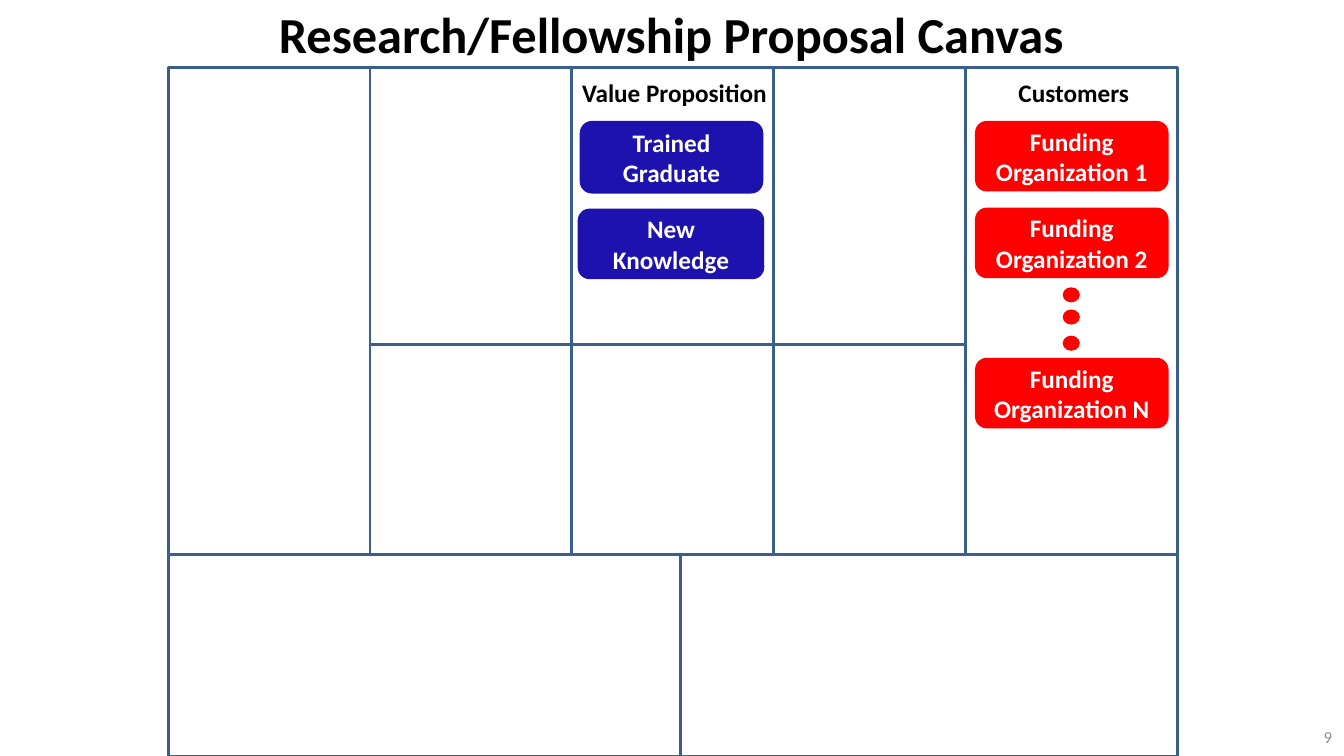
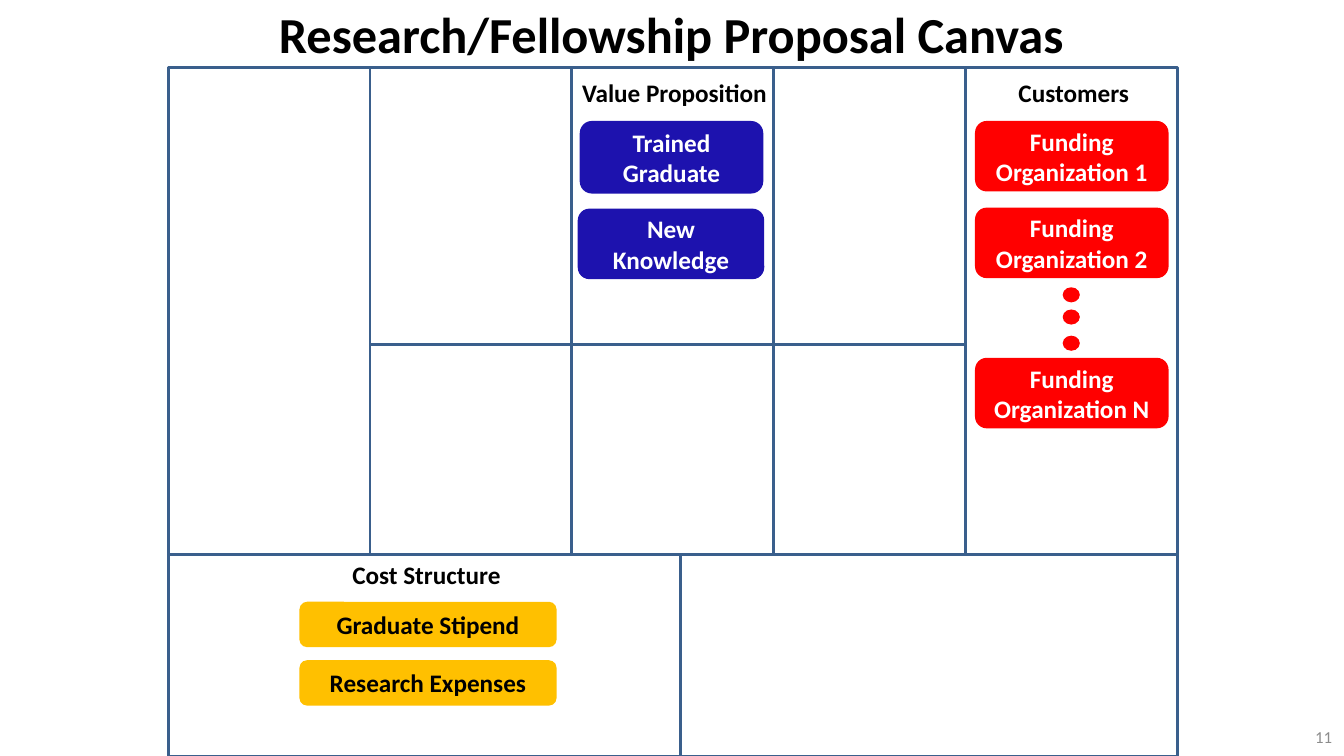
from dataclasses import dataclass

import pptx
import pptx.dml.color
import pptx.enum.shapes
import pptx.enum.text
import pptx.util

Inches = pptx.util.Inches
Shapes = pptx.enum.shapes.MSO_SHAPE
Align = pptx.enum.text.PP_ALIGN
Anchor = pptx.enum.text.MSO_ANCHOR


@dataclass(frozen=True)
class Theme:
    font: str = "Calibri"
    title_size: int = 36
    body_size: int = 18
    number_size: int = 12
    line_width: int = 2
    ink: str = "000000"
    paper: str = "FFFFFF"
    grid: str = "3A5F8C"
    number: str = "8C8C8C"
    value: str = "1D12AE"
    customer: str = "FF0000"
    cost: str = "FFC000"


@dataclass(frozen=True)
class Box:
    left: float
    top: float
    width: float
    height: float

    def inside(self, left, top, width, height):
        """Return a box whose corner is measured from this one's."""
        return Box(self.left + left, self.top + top, width, height)

    def lengths(self):
        return [Inches(round(side, 2))
                for side in (self.left, self.top, self.width, self.height)]


THEME = Theme()
SLIDE = Box(0, 0, 13.33, 7.5)

# Vertical and horizontal rules of the canvas
COLUMNS = (1.67, 3.67, 5.67, 7.67, 9.58, 11.68)
TOP, MIDDLE, LOWER, BOTTOM = 0.67, 3.42, 5.5, 7.5
SPLIT = 6.75


def cell(left, top, right, bottom):
    return Box(left, top, right - left, bottom - top)


UPPER_CELLS = [cell(left, TOP, right, MIDDLE)
               for left, right in zip(COLUMNS[1:4], COLUMNS[2:5])]
VALUE_CELL = UPPER_CELLS[1]
CUSTOMER_CELL = cell(COLUMNS[4], TOP, COLUMNS[5], LOWER)
COST_CELL = cell(COLUMNS[0], LOWER, SPLIT, BOTTOM)
CELLS = [
    COST_CELL,
    cell(COLUMNS[0], TOP, COLUMNS[1], LOWER),
    cell(SPLIT, LOWER, COLUMNS[5], BOTTOM),
    *UPPER_CELLS,
    CUSTOMER_CELL,
    cell(COLUMNS[2], MIDDLE, COLUMNS[3], LOWER),
]


def rgb(value):
    return pptx.dml.color.RGBColor.from_string(value)


def write(frame, text, size, color, bold=True, align=Align.CENTER,
          anchor=Anchor.MIDDLE):
    frame.vertical_anchor = anchor
    para = frame.paragraphs[0]
    para.alignment = align
    span = para.add_run()
    span.text = text
    span.font.name = THEME.font
    span.font.size = pptx.util.Pt(size)
    span.font.bold = bold
    span.font.color.rgb = rgb(color)


def add_text(page, box, text, size, color, wrap=True, **style):
    frame = page.shapes.add_textbox(*box.lengths()).text_frame
    frame.word_wrap = wrap
    write(frame, text, size, color, **style)


def add_filled(page, kind, box, fill):
    shape = page.shapes.add_shape(kind, *box.lengths())
    shape.shadow.inherit = False
    shape.fill.solid()
    shape.fill.fore_color.rgb = rgb(fill)
    shape.line.fill.background()
    return shape


def add_card(page, box, text, fill, color=THEME.paper):
    card = add_filled(page, Shapes.ROUNDED_RECTANGLE, box, fill)
    write(card.text_frame, text, THEME.body_size, color)


def add_heading(page, region, text, drop=0.05):
    """Centre a one-line heading, in a box a little wider than its region."""
    add_text(page, region.inside(-0.08, drop, region.width + 0.2, 0.4), text,
             THEME.body_size, THEME.ink, wrap=False, anchor=Anchor.TOP)


def add_grid(page, cells):
    for box in cells:
        shape = page.shapes.add_shape(Shapes.RECTANGLE, *box.lengths())
        shape.shadow.inherit = False
        shape.fill.background()
        shape.line.color.rgb = rgb(THEME.grid)
        shape.line.width = pptx.util.Pt(THEME.line_width)


def add_value_proposition(page, region):
    add_heading(page, region, "Value Proposition")
    add_card(page, region.inside(0.08, 0.53, 1.82, 0.72),
             "Trained Graduate", THEME.value)
    add_card(page, region.inside(0.06, 1.4, 1.85, 0.7),
             "New Knowledge", THEME.value)


def add_customers(page, region):
    add_heading(page, region, "Customers")
    for name, top in (("1", 0.53), ("2", 1.39), ("N", 2.88)):
        add_card(page, region.inside(0.09, top, 1.92, 0.7),
                 f"Funding Organization {name}", THEME.customer)
    for top in (2.18, 2.4, 2.66):
        add_filled(page, Shapes.OVAL, region.inside(0.96, top, 0.17, 0.15),
                   THEME.customer)


def add_cost_structure(page, region):
    add_heading(page, region, "Cost Structure", drop=0)
    for text, top in (("Graduate Stipend", 0.47), ("Research Expenses", 1.05)):
        add_card(page, region.inside(1.3, top, 2.55, 0.45), text,
                 THEME.cost, THEME.ink)


def add_canvas_page(deck, number, with_costs=False):
    page = deck.slides.add_slide(deck.slide_layouts[6])
    add_text(page, SLIDE.inside(0.66, -0.01, 12, 0.68),
             "Research/Fellowship Proposal Canvas",
             THEME.title_size, THEME.ink)
    add_text(page, SLIDE.inside(10.2, 7.11, 3.11, 0.4), str(number),
             THEME.number_size, THEME.number, bold=False, align=Align.RIGHT)
    add_grid(page, CELLS)
    add_value_proposition(page, VALUE_CELL)
    add_customers(page, CUSTOMER_CELL)
    if with_costs:
        add_cost_structure(page, COST_CELL)


def main():
    deck = pptx.Presentation()
    deck.slide_width = Inches(SLIDE.width)
    deck.slide_height = Inches(SLIDE.height)
    add_canvas_page(deck, 9)
    add_canvas_page(deck, 11, with_costs=True)
    deck.save("out.pptx")


if __name__ == "__main__":
    main()
